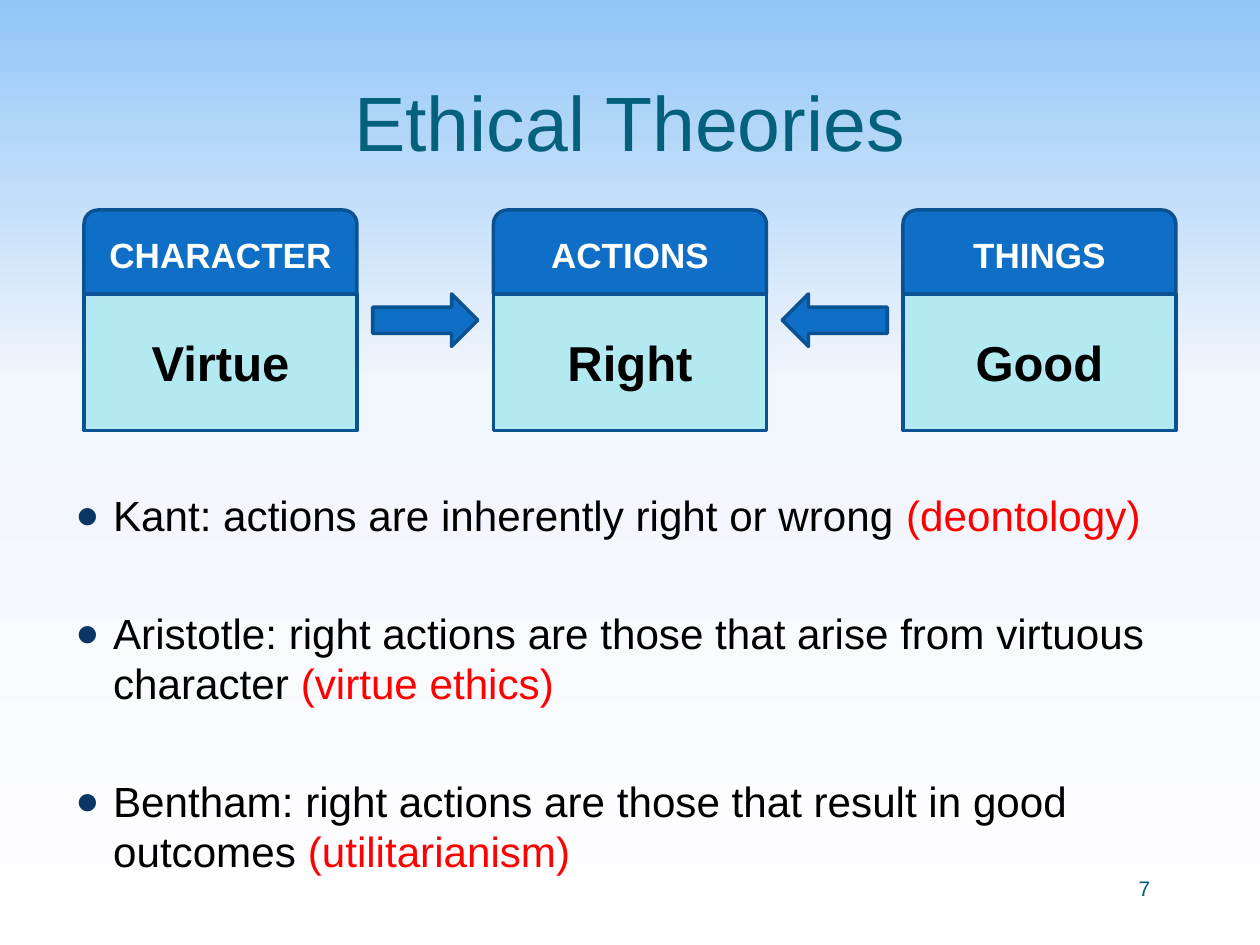
import copy

import lxml.etree
import pptx
import pptx.dml.color
import pptx.enum.shapes
import pptx.enum.text
import pptx.oxml.ns
import pptx.util

RGB = pptx.dml.color.RGBColor
TEAL = RGB(0x04, 0x61, 0x7B)
DEEP = RGB(0x04, 0x5D, 0x75)
BLUE = RGB(0x0F, 0x6F, 0xC6)
EDGE = RGB(0x0B, 0x52, 0x92)
PALE = RGB(0xB3, 0xEA, 0xF2)
NAVY = RGB(0x08, 0x37, 0x63)
SKY = RGB(0x91, 0xC6, 0xF7)
MIST = RGB(0xF1, 0xF5, 0xFC)
WHITE = RGB(0xFF, 0xFF, 0xFF)
BLACK = RGB(0x00, 0x00, 0x00)
RED = RGB(0xFF, 0x00, 0x00)

FORM = pptx.enum.shapes.MSO_SHAPE
ANCHOR = pptx.enum.text.MSO_ANCHOR
ALIGN = pptx.enum.text.PP_ALIGN
Pt = pptx.util.Pt

COLS, ROWS = 120, 90
LEFT, TOP, STEP = 8, 20, 39
WIDE, HEAD, BODY = 26, 8, 13
LONG, TALL = 10, 5

CARDS = [("CHARACTER", "Virtue"), ("ACTIONS", "Right"), ("THINGS", "Good")]
ARROWS = [FORM.RIGHT_ARROW, FORM.LEFT_ARROW]
POINTS = [
    ("Kant: actions are inherently right or wrong ", "(deontology)"),
    ("Aristotle: right actions are those that arise from virtuous character ", "(virtue ethics)"),
    ("Bentham: right actions are those that result in good outcomes ", "(utilitarianism)"),
]


class Deck:
    """Hold the style and the current slide, placing elements on a grid."""

    def __init__(self):
        self.show = pptx.Presentation()
        self.show.slide_width = pptx.util.Inches(10)
        self.show.slide_height = pptx.util.Inches(7.5)
        self.slide = self.show.slides.add_slide(self.show.slide_layouts[6])
        self.font = "Arial"

    def place(self, col, row, wide, high):
        unit = self.show.slide_width / COLS
        rise = self.show.slide_height / ROWS
        return [round(n) for n in (col * unit, row * rise, wide * unit, high * rise)]

    def style(self, run, size, color, bold=False):
        run.font.name = self.font
        run.font.size = Pt(size)
        run.font.bold = bold
        run.font.color.rgb = color

    def back(self, stops):
        fill = self.slide.background.fill
        fill.gradient()
        fill.gradient_angle = 270
        group = self.slide.element.xpath(".//a:gsLst")[0]
        while len(group) < len(stops):
            group.append(copy.deepcopy(group[0]))
        for stop, (spot, color) in zip(fill.gradient_stops, stops):
            stop.position = spot
            stop.color.rgb = color

    def letter(self, shape, text, size, color, bold=False, anchor=ANCHOR.MIDDLE):
        frame = shape.text_frame
        frame.word_wrap = True
        frame.vertical_anchor = anchor
        frame.text = text
        line = frame.paragraphs[0]
        line.alignment = ALIGN.CENTER
        self.style(line.runs[0], size, color, bold)

    def label(self, spot, text, size, color, anchor):
        box = self.slide.shapes.add_textbox(*self.place(*spot))
        frame = box.text_frame
        frame.margin_left = frame.margin_right = 0
        frame.margin_top = frame.margin_bottom = 0
        self.letter(box, text, size, color, anchor=anchor)

    def shape(self, form, spot, fill):
        item = self.slide.shapes.add_shape(form, *self.place(*spot))
        item.shadow.inherit = False
        item.fill.solid()
        item.fill.fore_color.rgb = fill
        item.line.color.rgb = EDGE
        item.line.width = Pt(2)
        return item

    def card(self, col, head, body):
        top = self.shape(FORM.ROUND_2_SAME_RECTANGLE, (col, TOP, WIDE, HEAD), BLUE)
        self.letter(top, head, 20, WHITE, True)
        base = self.shape(FORM.RECTANGLE, (col, TOP + HEAD, WIDE, BODY), PALE)
        self.letter(base, body, 28, BLACK, True)

    def bullet(self, line):
        props = line._p.get_or_add_pPr()
        dent = pptx.util.Inches(0.3)
        props.set("marL", str(dent))
        props.set("indent", str(-dent))
        tag = pptx.oxml.ns.qn
        tint = lxml.etree.SubElement(props, tag("a:buClr"))
        lxml.etree.SubElement(tint, tag("a:srgbClr"), val=str(NAVY))
        lxml.etree.SubElement(props, tag("a:buSzPct"), val="95000")
        lxml.etree.SubElement(props, tag("a:buFont"), typeface=self.font)
        lxml.etree.SubElement(props, tag("a:buChar"), char="●")

    def points(self, spot, items):
        frame = self.slide.shapes.add_textbox(*self.place(*spot)).text_frame
        frame.word_wrap = True
        for rank, parts in enumerate(items):
            line = frame.add_paragraph() if rank else frame.paragraphs[0]
            line.line_spacing = Pt(28.8)
            line.space_before = Pt(38.6 if rank else 0)
            self.bullet(line)
            for text, color in zip(parts, (BLACK, RED)):
                run = line.add_run()
                run.text = text
                self.style(run, 24.1, color)


def main():
    deck = Deck()
    deck.back([(0, SKY), (0.4, MIST), (1, WHITE)])
    deck.label((6, 4, 108, 15), "Ethical Theories", 44, TEAL, ANCHOR.MIDDLE)
    deck.points((6, 46, 108, 38), POINTS)
    deck.label((104, 83, 10, 2.75), "7", 12, DEEP, ANCHOR.BOTTOM)
    for rank, (head, body) in enumerate(CARDS):
        deck.card(LEFT + rank * STEP, head, body)
    gap = STEP - WIDE
    for rank, form in enumerate(ARROWS):
        col = LEFT + rank * STEP + WIDE + (gap - LONG) / 2
        deck.shape(form, (col, TOP + HEAD, LONG, TALL), BLUE)
    deck.show.save("out.pptx")


if __name__ == "__main__":
    main()
